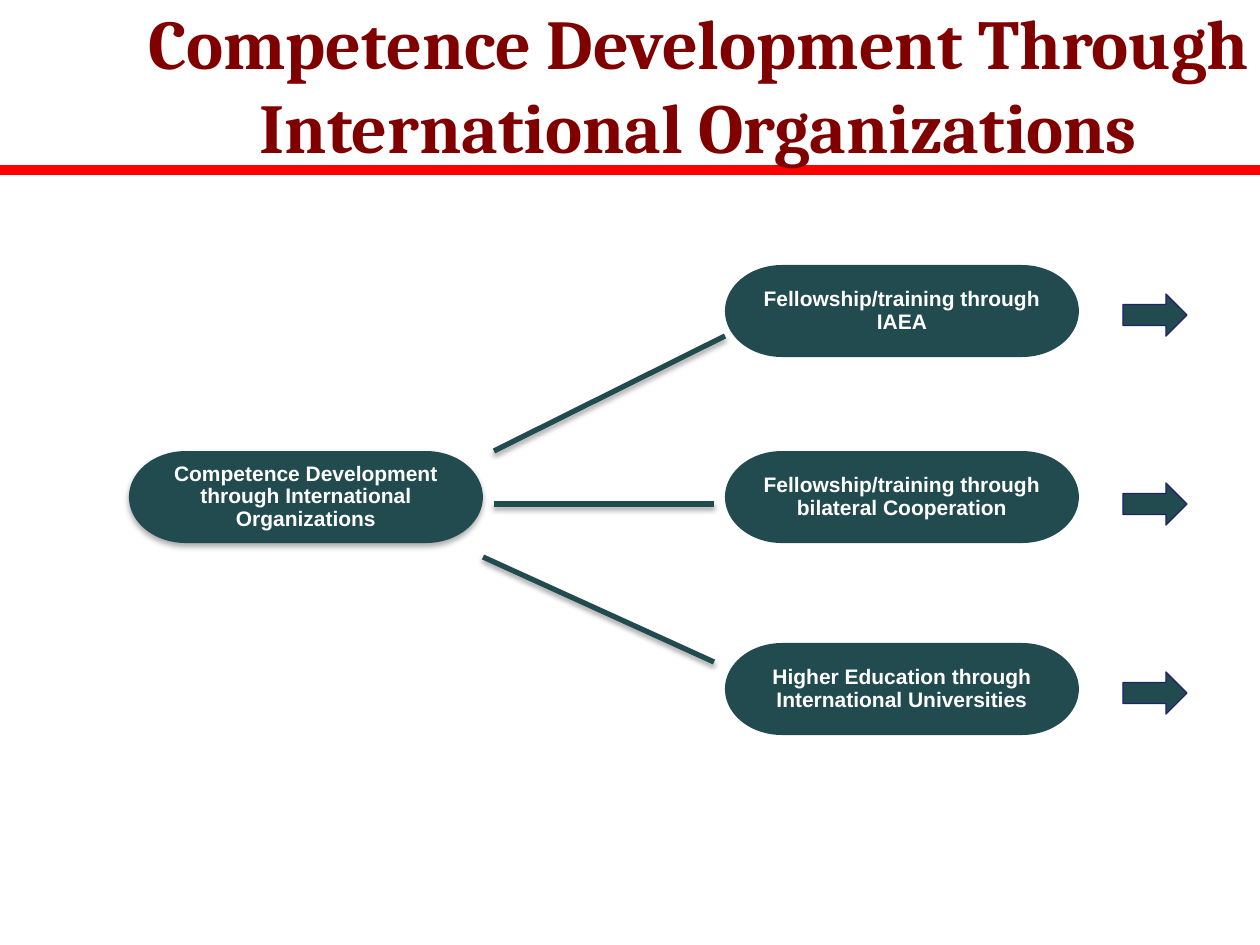
from dataclasses import dataclass

from lxml.etree import SubElement
from pptx import Presentation
from pptx.dml.color import RGBColor
from pptx.enum.shapes import MSO_CONNECTOR, MSO_SHAPE
from pptx.enum.text import MSO_ANCHOR, MSO_AUTO_SIZE, PP_ALIGN
from pptx.oxml.ns import qn
from pptx.util import Pt

PX_PER_INCH = 126
COLORS = {"teal": "224B50", "navy": "222267", "red": "FF0000",
          "maroon": "800000", "white": "FFFFFF", "black": "000000"}
TITLE_FONT = {"name": "Cambria", "size": Pt(40), "bold": True}
NODE_FONT = {"name": "Arial", "size": Pt(12), "bold": True}
NODE_W, NODE_H = 354, 92
ARROW_X, ARROW_Y, ARROW_W, ARROW_H, ARROW_PITCH = 1123, 294, 64, 42, 189


@dataclass
class Shadow:
    alpha: int  # percent
    blur: float  # points
    dist: float  # points


@dataclass
class Node:
    text: str
    x: int
    y: int
    shadow: Shadow | None = None


@dataclass
class Line:
    x1: int
    y1: int
    x2: int
    y2: int
    color: str = "teal"
    width: int = 3
    shadow: Shadow | None = None


LINE_SHADOW = Shadow(35, 3.1, 1.8)
NODES = [
    Node("Fellowship/training through IAEA", 725, 265),
    Node("Fellowship/training through bilateral Cooperation", 725, 451),
    Node("Higher Education through International Universities", 725, 643),
    Node("Competence Development through International Organizations",
         129, 451, Shadow(32, 3.5, 2.2)),
]
BRANCHES = [
    Line(494, 451, 725, 336, shadow=LINE_SHADOW),
    Line(494, 504, 714, 504, shadow=LINE_SHADOW),
    Line(483, 557, 714, 662, shadow=LINE_SHADOW),
]


def emu(px: int) -> int:
    return round(px * 914400 / PX_PER_INCH)


def rgb(name: str) -> RGBColor:
    return RGBColor.from_string(COLORS[name])


def set_shadow(shape, shadow: Shadow | None) -> None:
    """Give the shape a downward shadow, or an empty effect list for none."""
    sp_pr = shape._element.spPr
    for old in sp_pr.findall(qn("a:effectLst")):
        sp_pr.remove(old)
    effects = SubElement(sp_pr, qn("a:effectLst"))
    if shadow is None:
        return
    outer = SubElement(effects, qn("a:outerShdw"), blurRad=str(Pt(shadow.blur)),
                       dist=str(Pt(shadow.dist)), dir="5400000", rotWithShape="0")
    color = SubElement(outer, qn("a:srgbClr"), val=COLORS["black"])
    SubElement(color, qn("a:alpha"), val=str(shadow.alpha * 1000))


def write_text(tf, text: str, font: dict, color: str):
    """Fill the frame with one centred paragraph and return it."""
    tf.word_wrap = True
    tf.auto_size = MSO_AUTO_SIZE.NONE
    tf.vertical_anchor = MSO_ANCHOR.MIDDLE
    p = tf.paragraphs[0]
    p.alignment = PP_ALIGN.CENTER
    r = p.add_run()
    r.text = text
    for name, value in font.items():
        setattr(r.font, name, value)
    r.font.color.rgb = rgb(color)
    return p


def add_filled(s, kind: MSO_SHAPE, x: int, y: int, w: int, h: int):
    sp = s.shapes.add_shape(kind, emu(x), emu(y), emu(w), emu(h))
    sp.fill.solid()
    sp.fill.fore_color.rgb = rgb("teal")
    return sp


def add_node(s, node: Node) -> None:
    sp = add_filled(s, MSO_SHAPE.FLOWCHART_TERMINATOR, node.x, node.y, NODE_W, NODE_H)
    sp.line.fill.background()
    set_shadow(sp, node.shadow)
    tf = sp.text_frame
    for side in ("left", "top", "right", "bottom"):
        setattr(tf, f"margin_{side}", emu(1))
    p = write_text(tf, node.text, NODE_FONT, "white")
    p.line_spacing = 0.9


def add_line(s, line: Line):
    cn = s.shapes.add_connector(MSO_CONNECTOR.STRAIGHT, emu(line.x1), emu(line.y1),
                                emu(line.x2), emu(line.y2))
    cn.line.color.rgb = rgb(line.color)
    cn.line.width = Pt(line.width)
    set_shadow(cn, line.shadow)
    return cn


def add_arrow(s, y: int) -> None:
    sp = add_filled(s, MSO_SHAPE.RIGHT_ARROW, ARROW_X, y, ARROW_W, ARROW_H)
    sp.line.color.rgb = rgb("navy")
    sp.line.width = Pt(0.75)
    set_shadow(sp, None)


def add_title(s, text: str) -> None:
    title = s.shapes.title
    box = {"left": 105, "top": 42, "width": 1187, "height": 84}
    for name, px in box.items():
        setattr(title, name, emu(px))
    write_text(title.text_frame, text, TITLE_FONT, "maroon")


def main() -> None:
    prs = Presentation()
    prs.slide_width, prs.slide_height = emu(1260), emu(945)
    s = prs.slides.add_slide(prs.slide_layouts[5])

    add_title(s, "Competence Development Through International Organizations")
    rule = add_line(s, Line(0, 170, 1260, 170, "red", 6))
    s.shapes.title._element.addprevious(rule._element)  # the rule lies behind the title

    for node in NODES:
        add_node(s, node)
    for branch in BRANCHES:
        add_line(s, branch)
    for i in range(3):
        add_arrow(s, ARROW_Y + i * ARROW_PITCH)

    prs.save("out.pptx")


if __name__ == "__main__":
    main()
